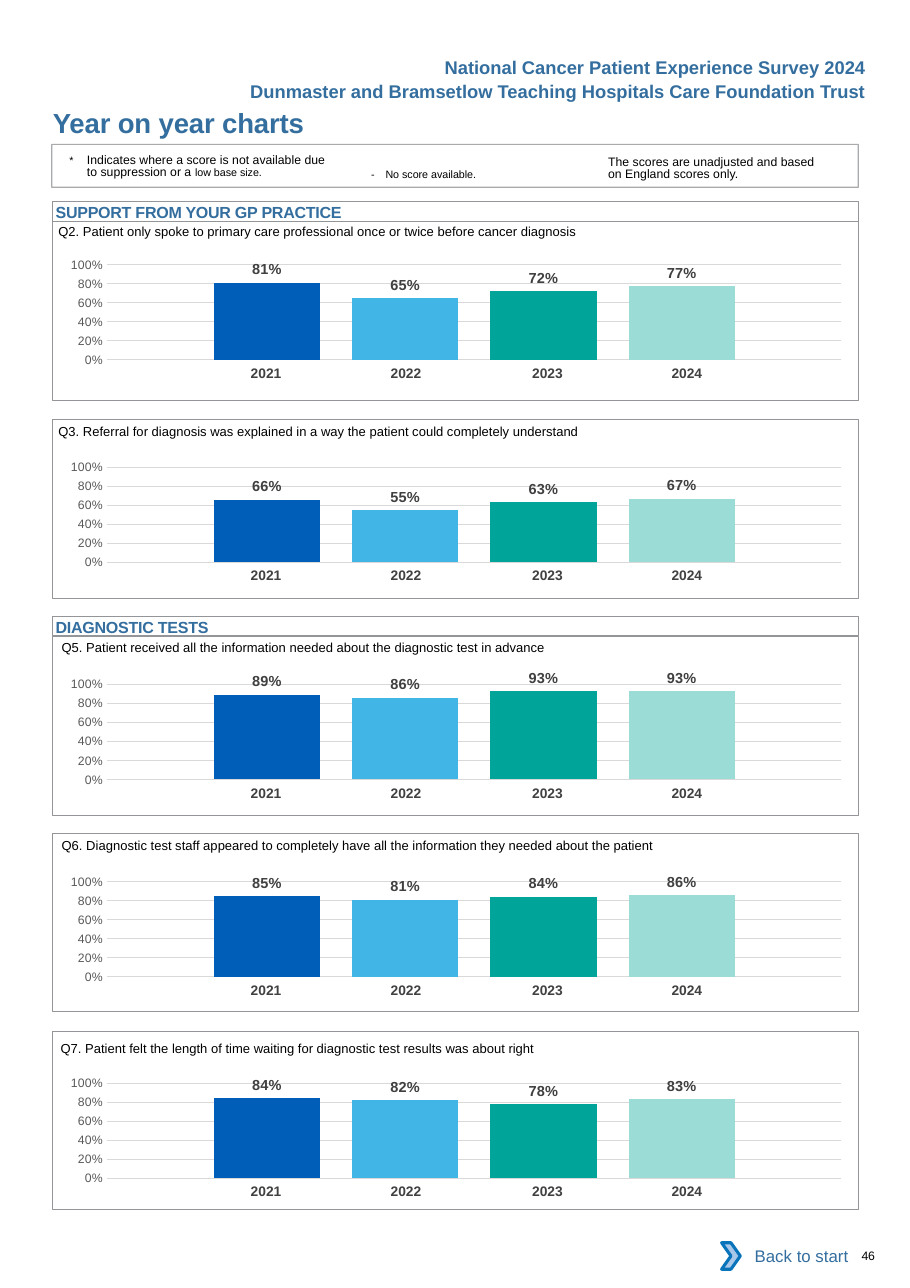
from dataclasses import dataclass
from typing import Any, Optional

from lxml.etree import SubElement
from pptx import Presentation
from pptx.chart.data import CategoryChartData
from pptx.dml.color import RGBColor
from pptx.enum.chart import XL_CHART_TYPE, XL_LABEL_POSITION, XL_TICK_MARK
from pptx.enum.shapes import MSO_SHAPE
from pptx.enum.text import MSO_ANCHOR, PP_ALIGN
from pptx.oxml.ns import qn
from pptx.util import Inches, Length, Pt

RECTANGLE, CHEVRON = MSO_SHAPE.RECTANGLE, MSO_SHAPE.CHEVRON
LEFT, CENTER, RIGHT = PP_ALIGN.LEFT, PP_ALIGN.CENTER, PP_ALIGN.RIGHT
TOP, MIDDLE = MSO_ANCHOR.TOP, MSO_ANCHOR.MIDDLE
CLUSTERED = XL_CHART_TYPE.COLUMN_CLUSTERED
OUTSIDE_END = XL_LABEL_POSITION.OUTSIDE_END
NO_TICK = XL_TICK_MARK.NONE

CELL = Inches(0.1)
COLUMNS, ROWS = 82.6, 116.9
PANEL_COLUMN, PANEL_WIDTH, PANEL_HEIGHT = 4.75, 73.2, 16.2
CHART_COLUMN, CHART_HEIGHT = 3.9, 12.9
YEARS_COLUMN, YEARS_OFFSET, YEARS_HEIGHT = 17.3, 10.5, 2.7
YEAR_WIDTHS = (12.7, 12.7, 13.4, 12.7)
YEAR_RIGHT_INSETS = (0, 0, 0.4, 1.2)
PLOT_SHARES = {"x": 0.08, "y": 0.14, "w": 0.91, "h": 0.67}
NO_TABLE_STYLE = "{2D5ABB26-0587-4C30-8999-92F81FD0307C}"
FONT = "Arial"

COLORS = {
    "heading": "336E9F", "text": "000000", "border": "939598", "white": "FFFFFF",
    "year": "414042", "label": "404040", "axis": "595959", "grid": "D9D9D9",
    "arrow": "A8C7E9", "arrow_line": "0A74BB",
    "2021": "005EB8", "2022": "41B6E6", "2023": "00A499", "2024": "9CDCD7",
}
YEARS = ("2021", "2022", "2023", "2024")


@dataclass(frozen=True)
class Box:
    """A place on the grid, in columns and rows."""
    column: float
    row: float
    width: float
    height: float

    def lengths(self) -> tuple[Length, ...]:
        """Return left, top, width and height."""
        return tuple(grid(value) for value in (self.column, self.row, self.width, self.height))


@dataclass(frozen=True)
class Question:
    """A survey question with its panel, text and chart places."""
    text: str
    text_column: float
    text_row: float
    panel_row: float
    chart_row: float
    scores: tuple[float, ...]


QUESTIONS = (
    Question("Q2. Patient only spoke to primary care professional once or twice before cancer diagnosis",
             5.3, 19.4, 20.1, 22.2, (0.81, 0.65, 0.72, 0.77)),
    Question("Q3. Referral for diagnosis was explained in a way the patient could completely understand",
             5.3, 37.5, 38.1, 40.6, (0.66, 0.55, 0.63, 0.67)),
    Question("Q5. Patient received all the information needed about the diagnostic test in advance",
             5.6, 57.1, 57.8, 60.3, (0.89, 0.86, 0.93, 0.93)),
    Question("Q6. Diagnostic test staff appeared to completely have all the information they needed about the patient",
             5.6, 75.1, 75.6, 78.2, (0.85, 0.81, 0.84, 0.86)),
    Question("Q7. Patient felt the length of time waiting for diagnostic test results was about right",
             5.5, 93.5, 93.6, 96.5, (0.84, 0.82, 0.78, 0.83)),
)
SECTIONS = (("SUPPORT FROM YOUR GP PRACTICE", 18.3), ("DIAGNOSTIC TESTS", 55.9))
HEADERS = (("National Cancer Patient Experience Survey 2024", 4.6),
           ("Dunmaster and Bramsetlow Teaching Hospitals Care Foundation Trust", 6.8))


def grid(cells: float) -> Length:
    """Turn grid cells into a length."""
    return Length(round(cells * CELL))


def color(name: str) -> RGBColor:
    """Look up a colour by name."""
    return RGBColor.from_string(COLORS[name])


def style_font(font: Any, size: float, color_name: str, bold: bool = False) -> None:
    """Set a font's face, size, colour and weight."""
    font.name, font.size, font.bold = FONT, Pt(size), bold
    font.color.rgb = color(color_name)


def write(frame: Any, *runs: tuple[str, float], color_name: str = "text", bold: bool = False,
          align: PP_ALIGN = LEFT, anchor: MSO_ANCHOR = TOP, wrap: bool = True, spacing: float = 0,
          line_points: float = 0, hanging: float = 0,
          insets: tuple[float, float, float, float] = (0, 0, 0, 0)) -> None:
    """Write runs of text and size into a frame with the given format."""
    frame.margin_left, frame.margin_top, frame.margin_right, frame.margin_bottom = map(grid, insets)
    frame.word_wrap, frame.vertical_anchor = wrap, anchor
    paragraph = frame.paragraphs[0]
    paragraph.alignment = align
    if line_points:
        paragraph.line_spacing = Pt(line_points)
    if hanging:
        properties = paragraph._p.get_or_add_pPr()
        properties.set("marL", str(grid(hanging)))
        properties.set("indent", str(-grid(hanging)))
    for text, size in runs:
        run = paragraph.add_run()
        run.text = text
        style_font(run.font, size, color_name, bold)
        if spacing:
            run._r.get_or_add_rPr().set("spc", str(round(spacing * 100)))


def add_text(slide: Any, box: Box, *runs: tuple[str, float], **text_format: Any) -> None:
    """Add a text box."""
    write(slide.shapes.add_textbox(*box.lengths()).text_frame, *runs, **text_format)


def add_outline(slide: Any, box: Box, preset: MSO_SHAPE = RECTANGLE, fill: Optional[str] = None,
                line: Optional[str] = "border", line_width: float = 0.5) -> Any:
    """Add a preset shape with an optional fill and line."""
    shape = slide.shapes.add_shape(preset, *box.lengths())
    shape.shadow.inherit = False
    if fill:
        shape.fill.solid()
        shape.fill.fore_color.rgb = color(fill)
    else:
        shape.fill.background()
    if line:
        shape.line.color.rgb = color(line)
        shape.line.width = Pt(line_width)
    else:
        shape.line.fill.background()
    return shape


def add_years(slide: Any, row: float) -> None:
    """Add the row of years below a chart."""
    box = Box(YEARS_COLUMN, row, sum(YEAR_WIDTHS), YEARS_HEIGHT)
    table = slide.shapes.add_table(1, len(YEARS), *box.lengths()).table
    table.first_row = table.horz_banding = False
    table._tbl.tblPr.find(qn("a:tableStyleId")).text = NO_TABLE_STYLE
    table.rows[0].height = grid(YEARS_HEIGHT)
    for index, (year, width, inset) in enumerate(zip(YEARS, YEAR_WIDTHS, YEAR_RIGHT_INSETS)):
        table.columns[index].width = grid(width)
        cell = table.cell(0, index)
        cell.fill.background()
        write(cell.text_frame, (year, 9), color_name="year", bold=True, align=CENTER)
        cell.margin_left, cell.margin_right = grid(1), grid(inset)
        cell.margin_top = cell.margin_bottom = grid(0.5)


def add_scores(slide: Any, row: float, scores: tuple[float, ...]) -> None:
    """Add a column chart with one series for each year."""
    data = CategoryChartData(number_format="0%")
    data.categories = ["1"]
    for number, score in enumerate(scores, 1):
        data.add_series(f"Series {number}", [score])
    box = Box(CHART_COLUMN, row, PANEL_WIDTH, CHART_HEIGHT)
    chart = slide.shapes.add_chart(CLUSTERED, *box.lengths(), data).chart
    chart.has_legend = chart.has_title = False
    chart.font.name, chart.font.size = "Calibri", Pt(10)
    chart.category_axis.visible = False
    axis = chart.value_axis
    axis.minimum_scale, axis.maximum_scale, axis.major_unit = 0, 1, 0.2
    axis.major_tick_mark = axis.minor_tick_mark = NO_TICK
    axis.format.line.fill.background()
    axis.major_gridlines.format.line.color.rgb = color("grid")
    axis.major_gridlines.format.line.width = Pt(0.75)
    axis.tick_labels.number_format, axis.tick_labels.number_format_is_linked = "0%", False
    style_font(axis.tick_labels.font, 8, "axis")
    plot = chart.plots[0]
    plot.gap_width, plot.overlap, plot.vary_by_categories = 200, -30, False
    for series, year in zip(plot.series, YEARS):
        series.format.fill.solid()
        series.format.fill.fore_color.rgb = color(year)
        labels = series.data_labels
        labels.show_value, labels.position = True, OUTSIDE_END
        labels.number_format, labels.number_format_is_linked = "0%", False
        style_font(labels.font, 9.5, "label", True)
    area = chart._chartSpace.chart.plotArea
    for layout in area.findall(qn("c:layout")):
        area.remove(layout)
    layout = SubElement(area, qn("c:layout"))
    area.insert(0, layout)
    manual = SubElement(layout, qn("c:manualLayout"))
    settings = {"layoutTarget": "inner", "xMode": "edge", "yMode": "edge", **PLOT_SHARES}
    for name, value in settings.items():
        SubElement(manual, qn(f"c:{name}")).set("val", str(value))


def add_legend(slide: Any) -> None:
    """Add the framed notes on how to read the scores."""
    add_text(slide, Box(55.2, 13.9, 20.1, 2.5),
             ("The scores are unadjusted and based on England scores only.", 8),
             line_points=8.1, insets=(0, 0.3, 0, 0))
    add_text(slide, Box(33.7, 15.2, 16, 1.2), ("-\tNo score available.", 7), hanging=1.3)
    add_text(slide, Box(6.3, 13.7, 23.6, 2.6), ("*\t", 7),
             ("Indicates where a score is not available due to suppression or a ", 8),
             ("low base size.", 7), line_points=8.1, hanging=1.6, insets=(0, 0.3, 0, 0))
    frame = add_outline(slide, Box(4.7, 13.1, PANEL_WIDTH, 3.9), line_width=0.75)
    line_color = frame._element.spPr.find(f"{qn('a:ln')}//{qn('a:srgbClr')}")
    SubElement(line_color, qn("a:alpha")).set("val", "80000")


def main() -> None:
    """Build the year on year page and save it."""
    presentation = Presentation()
    presentation.slide_width, presentation.slide_height = grid(COLUMNS), grid(ROWS)
    slide = presentation.slides.add_slide(presentation.slide_layouts[6])
    for text, row in HEADERS:
        add_text(slide, Box(20, row, 59.6, 3), (text, 12), color_name="heading", bold=True,
                 align=RIGHT, insets=(1, 0.5, 1, 0.5))
    add_text(slide, Box(4.8, 9.6, 45, 3), ("Year on year charts", 18),
             color_name="heading", bold=True, spacing=-0.1)
    add_legend(slide)
    for text, row in SECTIONS:
        section = add_outline(slide, Box(PANEL_COLUMN, row, PANEL_WIDTH, 1.8))
        write(section.text_frame, (text, 10.5), color_name="heading", bold=True,
              spacing=-0.15, insets=(0.3, 0.1, 0, 0))
    for question in QUESTIONS:
        add_text(slide, Box(question.text_column, question.text_row, 72, 2.4),
                 (question.text, 8.5), insets=(0, 0.9, 0, 0))
        add_years(slide, question.chart_row + YEARS_OFFSET)
        add_scores(slide, question.chart_row, question.scores)
        add_outline(slide, Box(PANEL_COLUMN, question.panel_row, PANEL_WIDTH, PANEL_HEIGHT))
    button = add_outline(slide, Box(66.2, 111.9, 11.8, 4.2), fill="white", line=None)
    write(button.text_frame, ("Back to start", 11), color_name="heading", align=RIGHT,
          anchor=MIDDLE, insets=(1, 0.5, 1, 0.5))
    add_outline(slide, Box(65.5, 112.8, 1.7, 2.4), CHEVRON, "arrow", "arrow_line", 2)
    add_text(slide, Box(78.2, 113.3, 4, 1.3), ("46", 8), spacing=-0.2)
    presentation.save("out.pptx")


if __name__ == "__main__":
    main()
